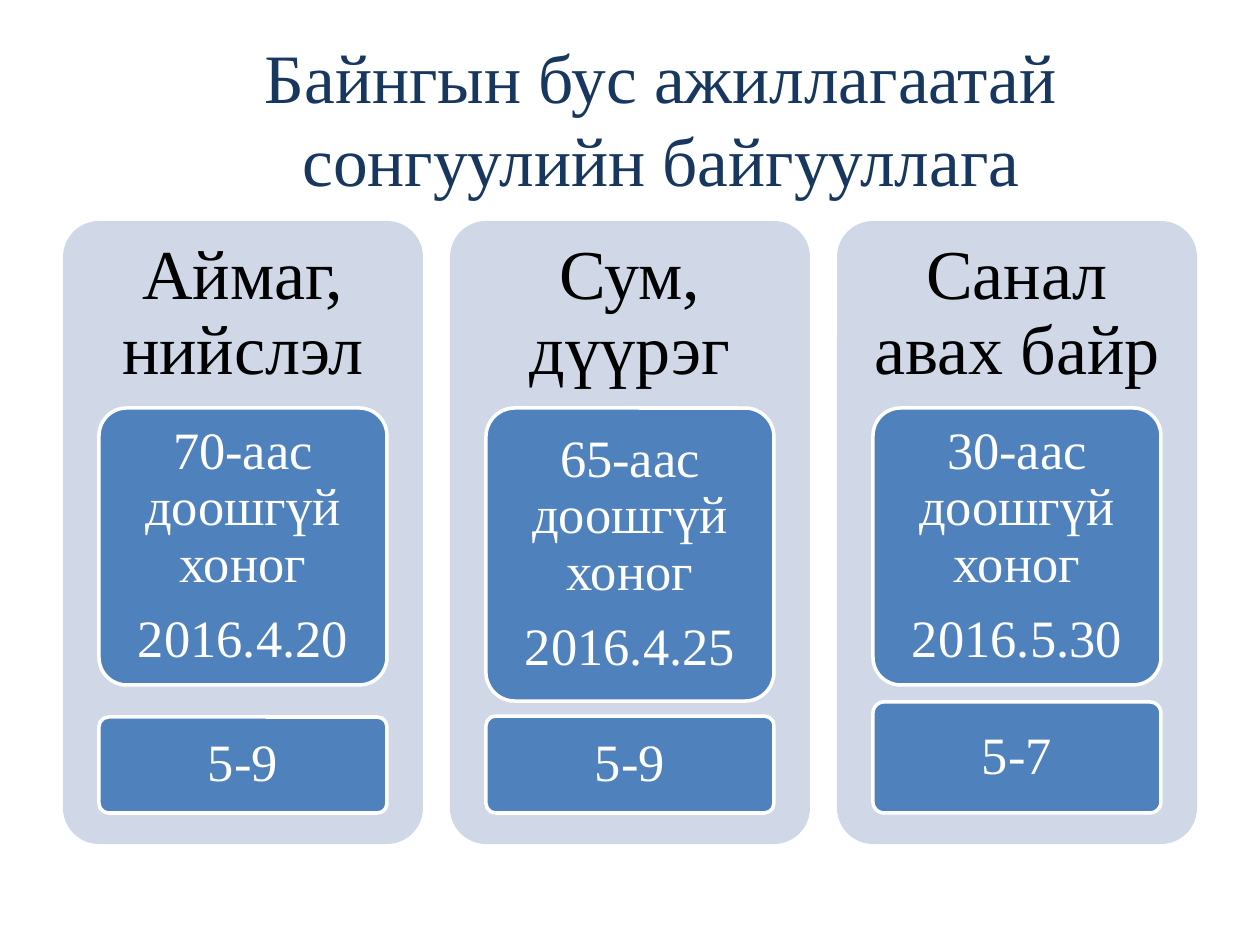
from pptx import Presentation
from pptx import util as u
from pptx.dml.color import RGBColor
from pptx.enum import shapes, text

PX = 914400 / 126
FONT = "Times New Roman"
NAVY = RGBColor(0x17, 0x37, 0x5E)
PALE = RGBColor(0xD0, 0xD8, 0xE8)
BLUE = RGBColor(0x4F, 0x81, 0xBD)
WHITE = RGBColor(0xFF, 0xFF, 0xFF)
BLACK = RGBColor(0, 0, 0)

TITLE = "Байнгын бус ажиллагаатай сонгуулийн байгууллага"
PANELS = [
    ("Аймаг, нийслэл", ("70-аас доошгүй хоног", "2016.4.20"), "5-9", 277, 96),
    ("Сум, дүүрэг", ("65-аас доошгүй хоног", "2016.4.25"), "5-9", 293, 97),
    ("Санал авах байр", ("30-аас доошгүй хоног", "2016.5.30"), "5-7", 277, 111),
]


def px(*nums):
    """Turn px lengths into EMU."""
    return [u.Emu(round(n * PX)) for n in nums]


def write(frame, lines, size, color, pad):
    """Fill a text frame with centred lines, padded by (x, y) px."""
    frame.word_wrap = True
    frame.vertical_anchor = text.MSO_ANCHOR.MIDDLE
    frame.margin_left, frame.margin_top = px(*pad)
    frame.margin_right, frame.margin_bottom = px(*pad)
    for i, line in enumerate(lines):
        para = frame.add_paragraph() if i else frame.paragraphs[0]
        para.text = line
        para.alignment = text.PP_ALIGN.CENTER
        para.line_spacing = 0.9
        para.space_after = u.Pt(size * 0.35)
        para.font.size, para.font.name = u.Pt(size), FONT
        para.font.color.rgb = color


def block(slide, box, fill):
    """Add a rounded block without shadow or line."""
    shape = slide.shapes.add_shape(
        shapes.MSO_SHAPE.ROUNDED_RECTANGLE, *px(*box))
    shape.adjustments[0] = 0.1
    shape.shadow.inherit = False
    shape.fill.solid()
    shape.fill.fore_color.rgb = fill
    shape.line.fill.background()
    return shape


def card(slide, box, lines):
    """Add a blue card with a white rim and white text."""
    shape = block(slide, box, BLUE)
    shape.line.color.rgb = WHITE
    shape.line.width = u.Pt(2)
    write(shape.text_frame, lines, 30, WHITE, (10, 8))


def panel(slide, box, head, term, count, tall, low):
    """Add a pale panel with a heading, a term card and a count card."""
    x, y, w, h = box
    block(slide, box, PALE)
    label = slide.shapes.add_textbox(*px(x, y, w, 187))
    write(label.text_frame, [head], 40, BLACK, (21, 21))
    inset = w // 10
    left, wide = x + inset, w - 2 * inset
    card(slide, (left, y + 187, wide, tall), term)
    card(slide, (left, y + h - 31 - low, wide, low), [count])


def heading(slide, box):
    """Place and format the slide title."""
    title = slide.shapes.title
    title.left, title.top, title.width, title.height = px(*box)
    frame = title.text_frame
    frame.text = TITLE
    frame.word_wrap = True
    frame.vertical_anchor = text.MSO_ANCHOR.MIDDLE
    para = frame.paragraphs[0]
    para.alignment = text.PP_ALIGN.CENTER
    para.font.size, para.font.name = u.Pt(39.6), FONT
    para.font.color.rgb = NAVY


def main():
    """Build and save the slide."""
    deck = Presentation()
    deck.slide_width, deck.slide_height = px(1260, 945)
    slide = deck.slides.add_slide(deck.slide_layouts[5])
    heading(slide, (94, 38, 1134, 158))
    for i, parts in enumerate(PANELS):
        panel(slide, (63 + 387 * i, 221, 360, 623), *parts)
    deck.save("out.pptx")


if __name__ == "__main__":
    main()
